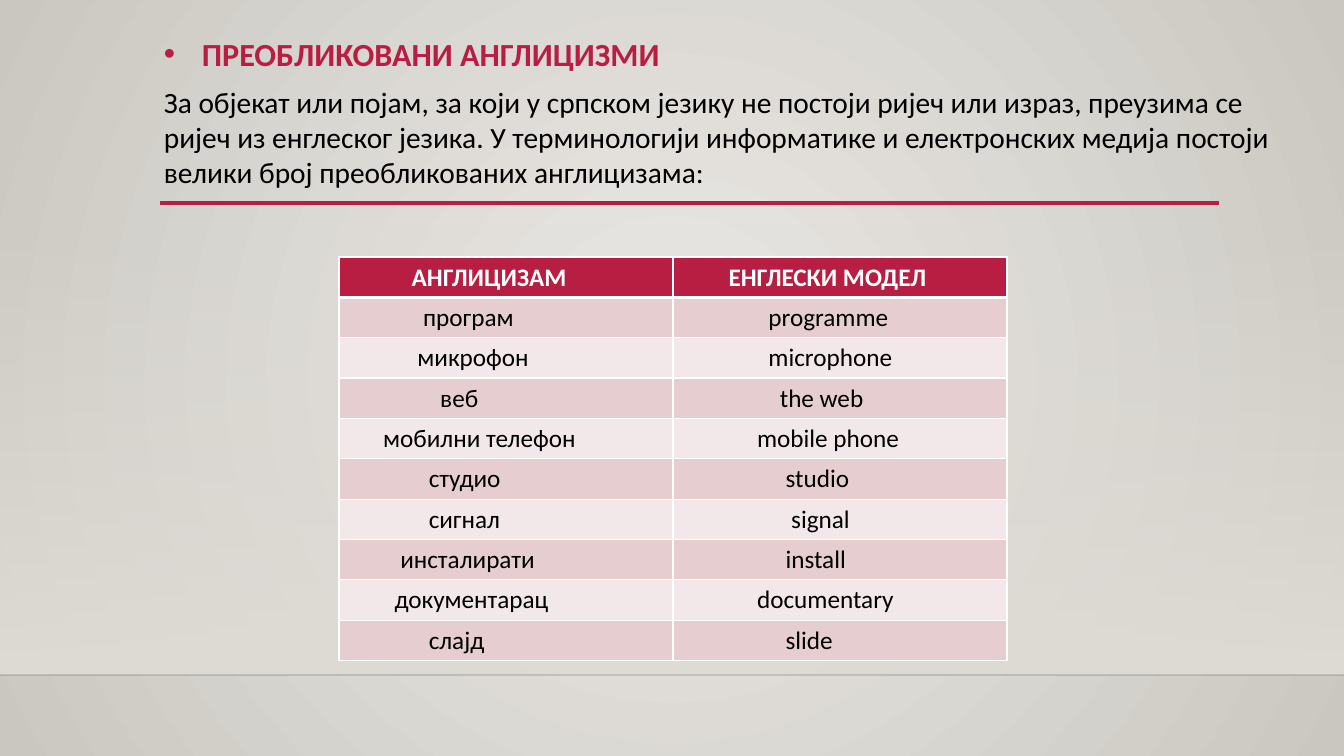
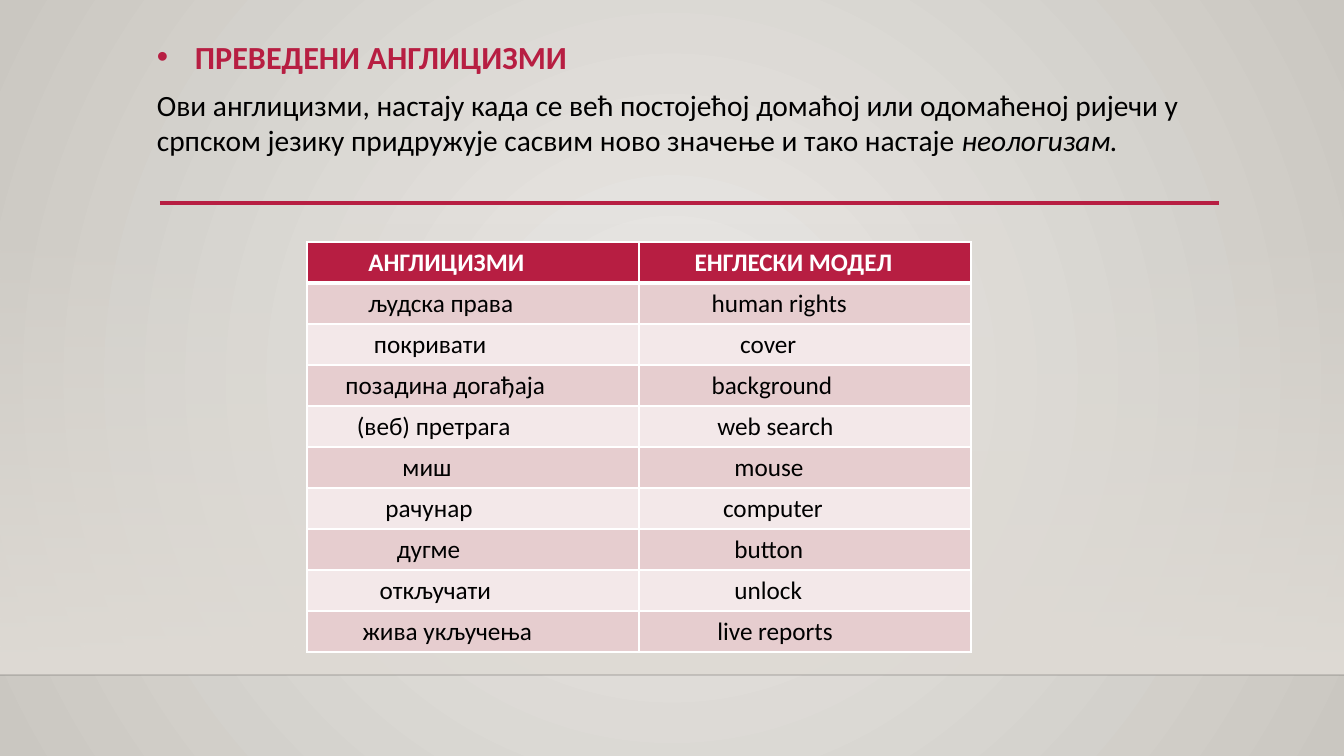
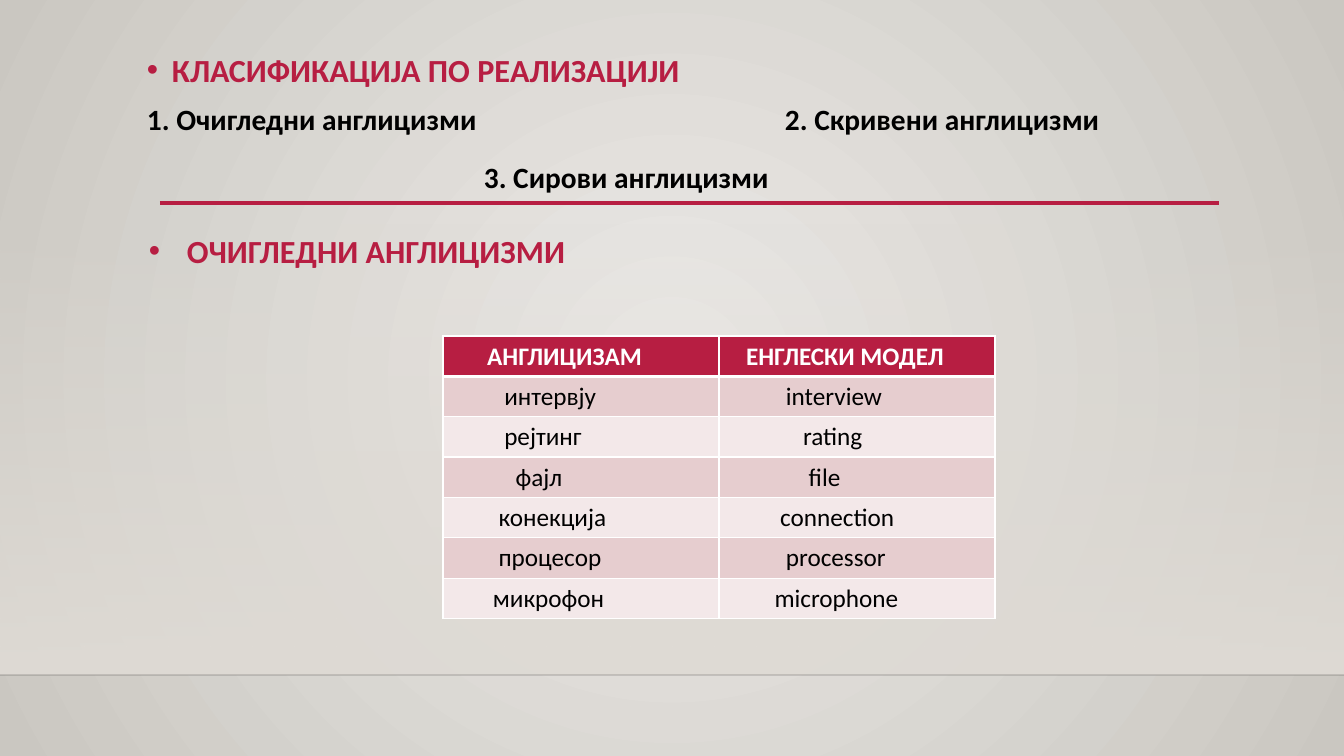
import pptx
import pptx.util
import pptx.dml.color
import pptx.enum.shapes
import pptx.oxml.ns
from lxml import etree

# Shared style
W, H = 1344, 756
PX = 914400 / 100.8
FONT = "Calibri"
RED, BLACK, WHITE = "B71E42", "000000", "FFFFFF"
ROW_FILLS = ("F3E8E9", "E6CDCF")
BACKGROUND = ("ECEAE7", "CAC7C1")
BAND = "DFDBD5"
HEAD_SIZE, BODY_SIZE, CELL_SIZE = 23, 21, 18
FLOOR_Y = 675
CELL_INSET, INDENT_STEP = 10, 5.7

# Content: boxes are (left, top, width, height); each table cell is
# (text, indent steps)
SLIDES = [
    {
        "headings": [("ПРЕОБЛИКОВАНИ АНГЛИЦИЗМИ", (154, 29, 541, 49), 38)],
        "texts": [
            ("За објекат или појам, за који у српском језику не постоји ријеч "
             "или израз, преузима се ријеч из енглеског језика. У терминологији "
             "информатике и електронских медија постоји велики број "
             "преобликованих англицизама:", (154, 79, 1153, 192), {}),
        ],
        "table": {"at": (339, 257), "col": 334, "row": 40, "cells": [
            (("АНГЛИЦИЗАМ", 11), ("ЕНГЛЕСКИ МОДЕЛ", 8)),
            (("програм", 13), ("programme", 15)),
            (("микрофон", 12), ("microphone", 15)),
            (("веб", 16), ("the web", 17)),
            (("мобилни телефон", 6), ("mobile phone", 13)),
            (("студио", 14), ("studio", 18)),
            (("сигнал", 14), ("signal", 19)),
            (("инсталирати", 9), ("install", 18)),
            (("документарац", 8), ("documentary", 13)),
            (("слајд", 14), ("slide", 18)),
        ]},
    },
    {
        "headings": [("ПРЕВЕДЕНИ АНГЛИЦИЗМИ", (147, 32, 561, 49), 38)],
        "texts": [
            ("Ови англицизми, настају када се већ постојећој домаћој или "
             "одомаћеној ријечи у српском језику придружује сасвим ново значење "
             "и тако настаје ", (147, 82, 1100, 82), {"italic_end": "неологизам."}),
        ],
        "table": {"at": (307, 242), "col": 332, "row": 41, "cells": [
            (("АНГЛИЦИЗМИ", 9), ("ЕНГЛЕСКИ МОДЕЛ", 8)),
            (("људска права", 9), ("human rights", 11)),
            (("покривати", 10), ("cover", 16)),
            (("позадина догађаја", 5), ("background", 11)),
            (("(веб) претрага", 7), ("web search", 12)),
            (("миш", 15), ("mouse", 15)),
            (("рачунар", 12), ("computer", 13)),
            (("дугме", 14), ("button", 15)),
            (("откључати", 11), ("unlock", 15)),
            (("жива укључења", 8), ("live reports", 12)),
        ]},
    },
    {
        "headings": [
            ("КЛАСИФИКАЦИЈА ПО РЕАЛИЗАЦИЈИ", (137, 45, 1082, 49), 25),
            ("ОЧИГЛЕДНИ АНГЛИЦИЗМИ", (139, 226, 494, 49), 38),
        ],
        "texts": [
            ("1. Очигледни англицизми", (137, 96, 473, 45), {"bold": True}),
            ("2. Скривени англицизми", (775, 96, 376, 45), {"bold": True}),
            ("3. Сирови англицизми", (474, 154, 521, 45), {"bold": True}),
        ],
        "table": {"at": (443, 336), "col": 276, "row": 40, "cells": [
            (("АНГЛИЦИЗАМ", 6), ("ЕНГЛЕСКИ МОДЕЛ", 3)),
            (("интервју", 9), ("interview", 10)),
            (("рејтинг", 9), ("rating", 13)),
            (("фајл", 11), ("file", 14)),
            (("конекција", 8), ("connection", 9)),
            (("процесор", 8), ("processor", 10)),
            (("микрофон", 7), ("microphone", 8)),
        ]},
    },
]


# Helpers
def px(*values):
    return [pptx.util.Emu(round(v * PX)) for v in values]


def rgb(value):
    return pptx.dml.color.RGBColor.from_string(value)


def sub(parent, tag, **attrs):
    return etree.SubElement(parent, pptx.oxml.ns.qn(tag), attrs)


def first(element, tag):
    return next(element.iter(pptx.oxml.ns.qn(tag)))


def write(p, text, size=BODY_SIZE, color=BLACK, bold=False, italic=False):
    r = p.add_run()
    r.text = text
    f = r.font
    f.name, f.size, f.bold, f.italic = FONT, pptx.util.Pt(size), bold, italic
    f.color.rgb = rgb(color)


def add_text(s, text, box, bullet=0, italic_end="", **fmt):
    tf = s.shapes.add_textbox(*px(*box)).text_frame
    tf.word_wrap = True
    p = tf.paragraphs[0]
    if bullet:
        pPr = p._p.get_or_add_pPr()
        indent = px(bullet)[0]
        pPr.set("marL", str(indent))
        pPr.set("indent", str(-indent))
        sub(pPr, "a:buFont", typeface="Arial")
        sub(pPr, "a:buChar", char="•")
    write(p, text, **fmt)
    if italic_end:
        write(p, italic_end, italic=True, **fmt)


def add_line(s, x1, x2, y, color, width, alpha=None):
    line = s.shapes.add_connector(pptx.enum.shapes.MSO_CONNECTOR.STRAIGHT,
                                  *px(x1, y, x2, y))
    line.line.color.rgb = rgb(color)
    line.line.width = pptx.util.Pt(width)
    if alpha:
        sub(first(line._element, "a:srgbClr"), "a:alpha", val=str(alpha * 1000))
    sub(line._element.spPr, "a:effectLst")


def set_gradient(fill, colors):
    fill.gradient()
    for stop, color, position in zip(fill.gradient_stops, colors, (0, 1)):
        stop.color.rgb = rgb(color)
        stop.position = position


def set_background(master):
    set_gradient(master.background.fill, BACKGROUND)
    grad = first(master.element, "a:gradFill")
    grad.remove(first(grad, "a:lin"))
    centre = dict.fromkeys("ltrb", "50000")
    sub(sub(grad, "a:path", path="circle"), "a:fillToRect", **centre)


def add_frame(s):
    band = s.shapes.add_shape(pptx.enum.shapes.MSO_SHAPE.RECTANGLE,
                              *px(0, 223, W, FLOOR_Y - 223))
    band.shadow.inherit = False
    band.line.fill.background()
    set_gradient(band.fill, (BAND, BAND))
    band.fill.gradient_angle = 270
    sub(first(band._element, "a:srgbClr"), "a:alpha", val="0")
    add_line(s, 0, W, FLOOR_Y, "000001", 1, alpha=20)
    add_line(s, 160, 1219, 203, RED, 2.5)


def set_borders(cell, top, bottom):
    tcPr = cell._tc.get_or_add_tcPr()
    for side, width in (("L", 1), ("R", 1), ("T", top), ("B", bottom)):
        ln = sub(tcPr, "a:ln" + side, w=str(pptx.util.Pt(width)))
        sub(sub(ln, "a:solidFill"), "a:srgbClr", val=WHITE)


def add_word_table(s, at, col, row, cells):
    n_rows, n_cols = len(cells), len(cells[0])
    table = s.shapes.add_table(n_rows, n_cols,
                               *px(*at, col * n_cols, row * n_rows)).table
    for column in table.columns:
        column.width = px(col)[0]
    for i, words in enumerate(cells):
        table.rows[i].height = px(row)[0]
        head = i == 0
        for j, (word, steps) in enumerate(words):
            cell = table.cell(i, j)
            set_borders(cell, top=3 if i == 1 else 1, bottom=3 if head else 1)
            cell.fill.solid()
            cell.fill.fore_color.rgb = rgb(RED if head else ROW_FILLS[i % 2])
            cell.margin_left = px(CELL_INSET + steps * INDENT_STEP)[0]
            write(cell.text_frame.paragraphs[0], word, size=CELL_SIZE,
                  color=WHITE if head else BLACK, bold=head)


# Build
def main():
    prs = pptx.Presentation()
    prs.slide_width, prs.slide_height = px(W, H)
    set_background(prs.slide_master)
    for content in SLIDES:
        s = prs.slides.add_slide(prs.slide_layouts[6])
        add_frame(s)
        for text, box, indent in content["headings"]:
            add_text(s, text, box, bullet=indent, size=HEAD_SIZE,
                     color=RED, bold=True)
        for text, box, fmt in content["texts"]:
            add_text(s, text, box, **fmt)
        add_word_table(s, **content["table"])
    prs.save("out.pptx")


if __name__ == "__main__":
    main()
